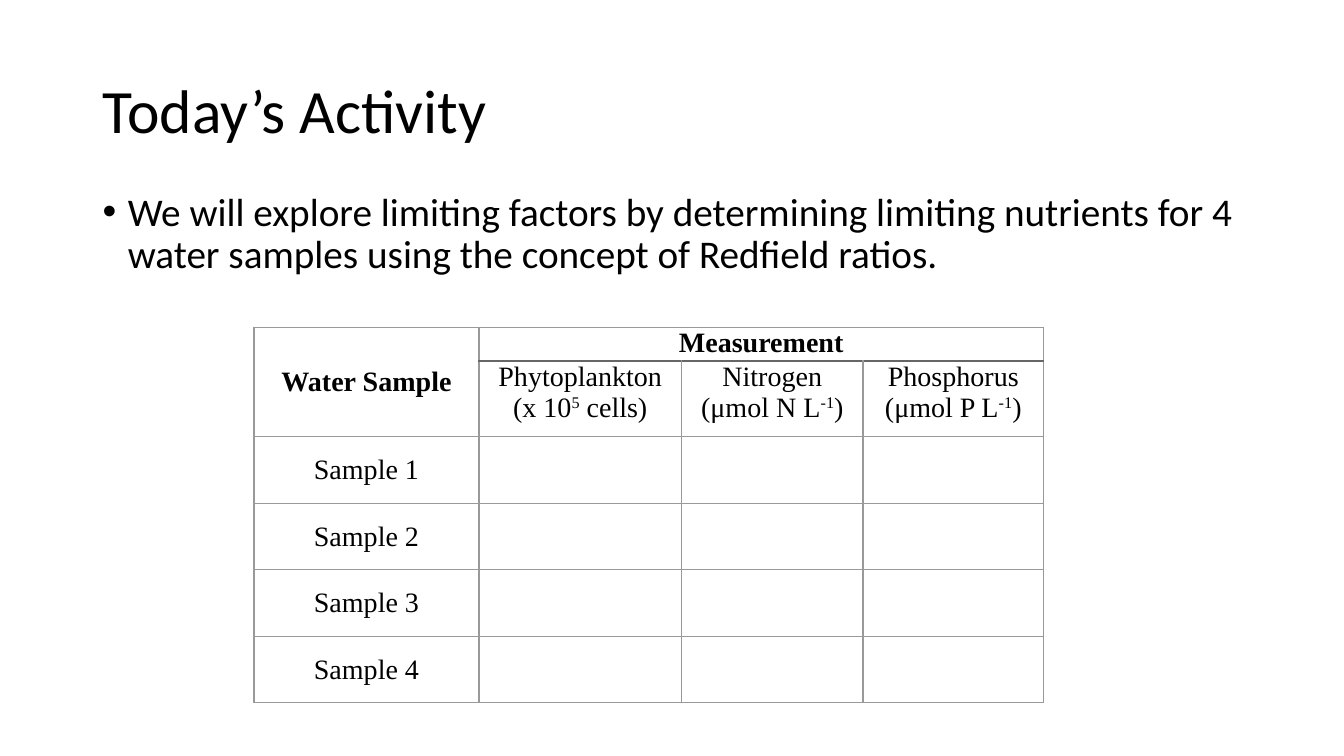
from lxml import etree
from pptx import Presentation
from pptx.dml.color import RGBColor
from pptx.enum.text import MSO_ANCHOR, PP_ALIGN
from pptx.oxml.ns import qn
from pptx.util import Inches, Pt

TOP, MIDDLE = MSO_ANCHOR.TOP, MSO_ANCHOR.MIDDLE
CENTER = PP_ALIGN.CENTER
SANS, SERIF = "Calibri", "Times New Roman"
BLACK, GREY, DARK = "000000", "999999", "666666"
COLS = [2.23, 2.01, 1.8, 1.79]
ROWS = [0.33, 0.75] + [0.66] * 4
UNITS = [
    ("Phytoplankton (x 10", "5", " cells)"),
    ("Nitrogen (μmol N L", "-1", ")"),
    ("Phosphorus (μmol P L", "-1", ")"),
]


def color(code):
    """Turn a hex string into a colour."""
    return RGBColor.from_string(code)


def add_run(para, text, size, face, bold=False, raised=False):
    """Add one styled run to a paragraph."""
    run = para.add_run()
    run.text = text
    font = run.font
    font.size, font.name, font.bold = Pt(size), face, bold
    font.color.rgb = color(BLACK)
    if raised:
        run._r.get_or_add_rPr().set("baseline", "30000")


def add_text(slide, box, text, size, anchor):
    """Add a wrapped text box and return its paragraph."""
    frame = slide.shapes.add_textbox(*map(Inches, box)).text_frame
    frame.word_wrap = True
    frame.vertical_anchor = anchor
    para = frame.paragraphs[0]
    para.line_spacing = 0.9
    add_run(para, text, size, SANS)
    return para


def add_bullet(para):
    """Give a paragraph a hanging bullet."""
    props = para._p.get_or_add_pPr()
    props.set("marL", str(Inches(0.25)))
    props.set("indent", str(-Inches(0.25)))
    etree.SubElement(props, qn("a:buFont"), typeface="Arial")
    etree.SubElement(props, qn("a:buChar"), char="•")


def add_edge(cell, side, code, width):
    """Draw one border of a cell."""
    props = cell._tc.get_or_add_tcPr()
    line = etree.SubElement(props, qn("a:ln" + side), w=str(Pt(width)))
    fill = etree.SubElement(line, qn("a:solidFill"))
    etree.SubElement(fill, qn("a:srgbClr"), val=code)


def style_cell(cell, row, col):
    """Set the borders, fill and margins of a cell."""
    heavy = {(0, "B"), (1, "T")} if col else set()
    for side in "LRTB":
        edge = (DARK, 1.5) if (row, side) in heavy else (GREY, 1)
        add_edge(cell, side, *edge)
    cell.fill.background()
    cell.margin_left = cell.margin_right = Inches(0.07)
    cell.margin_top = cell.margin_bottom = 0
    cell.text_frame.paragraphs[0].font.size = Pt(20)


def fill_cell(cell, parts, anchor=TOP, bold=False):
    """Write centred runs, raising every second one."""
    cell.vertical_anchor = anchor
    para = cell.text_frame.paragraphs[0]
    para.alignment = CENTER
    for spot, text in enumerate(parts):
        add_run(para, text, 20, SERIF, bold, spot % 2 == 1)


def add_grid(slide):
    """Add the table of water samples."""
    box = map(Inches, (2.52, 3.25, sum(COLS), sum(ROWS)))
    table = slide.shapes.add_table(len(ROWS), len(COLS), *box).table
    table.first_row = table.horz_banding = False
    for col, width in enumerate(COLS):
        table.columns[col].width = Inches(width)
    for row, height in enumerate(ROWS):
        table.rows[row].height = Inches(height)
        for col in range(len(COLS)):
            style_cell(table.cell(row, col), row, col)
    table.cell(0, 0).merge(table.cell(1, 0))
    table.cell(0, 1).merge(table.cell(0, 3))
    fill_cell(table.cell(0, 0), ["Water Sample"], MIDDLE, True)
    fill_cell(table.cell(0, 1), ["Measurement"], bold=True)
    for col, parts in enumerate(UNITS, 1):
        fill_cell(table.cell(1, col), parts)
    for num in range(1, 5):
        fill_cell(table.cell(num + 1, 0), [f"Sample {num}"], MIDDLE)


def main():
    """Build the slide and save it."""
    deck = Presentation()
    deck.slide_width, deck.slide_height = Inches(13.33), Inches(7.5)
    slide = deck.slides.add_slide(deck.slide_layouts[6])
    add_text(slide, (0.92, 0.4, 11.5, 1.45), "Today’s Activity", 44, MIDDLE)
    body = add_text(
        slide, (0.92, 1.86, 11.5, 4.76),
        "We will explore limiting factors by determining limiting nutrients "
        "for 4 water samples using the concept of Redfield ratios.", 28, TOP)
    body.space_before = Pt(10)
    add_bullet(body)
    add_grid(slide)
    deck.save("out.pptx")


if __name__ == "__main__":
    main()
